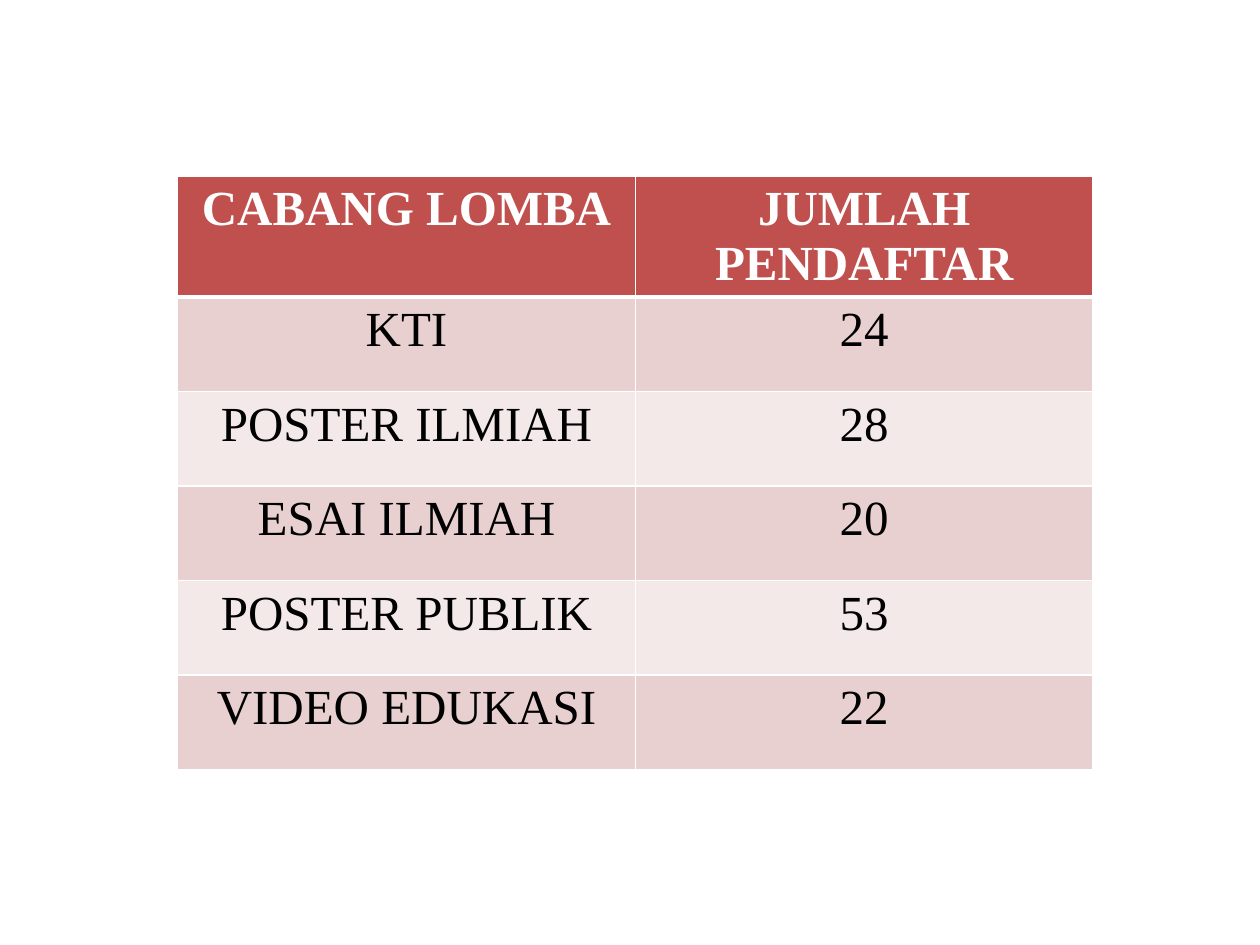
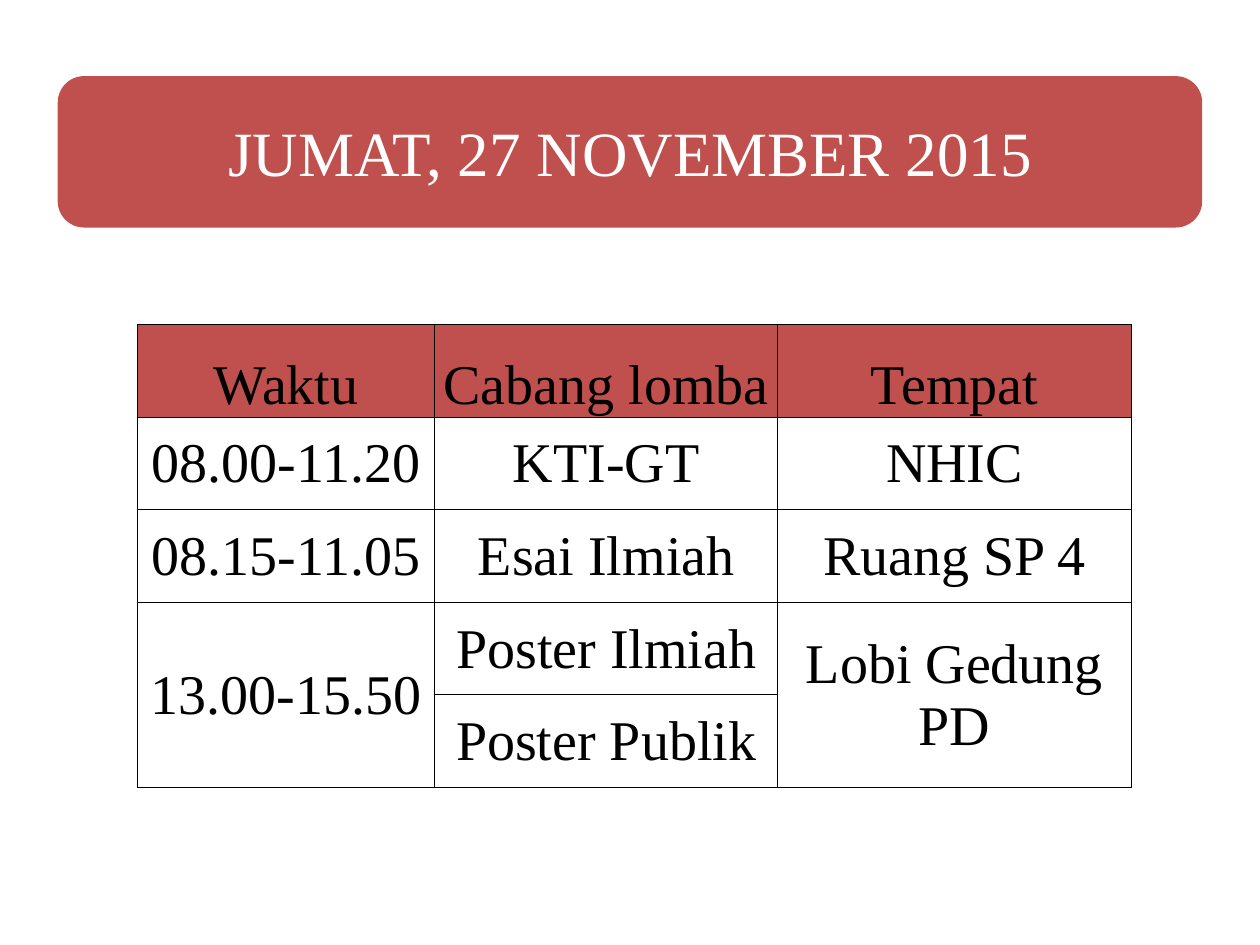
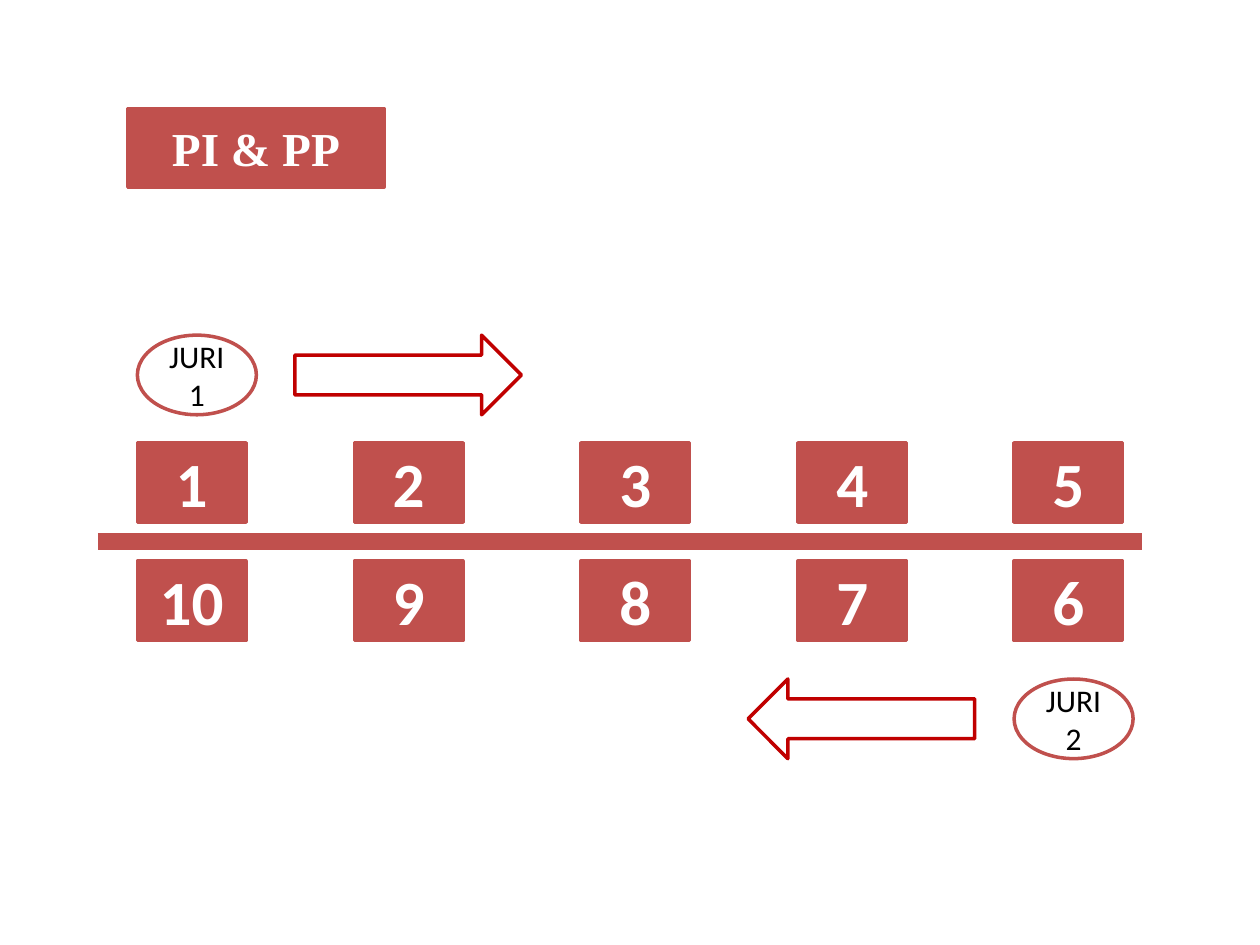
from lxml.etree import SubElement
from pptx import Presentation
from pptx.dml.color import RGBColor
from pptx.enum.shapes import MSO_CONNECTOR, MSO_SHAPE
from pptx.enum.text import MSO_ANCHOR, MSO_AUTO_SIZE, PP_ALIGN
from pptx.oxml.ns import qn
from pptx.util import Pt

BRICK = RGBColor(0xC0, 0x50, 0x4D)
CRIMSON = RGBColor(0xC0, 0x00, 0x00)
ROSE = RGBColor(0xE8, 0xD0, 0xD0)
BLUSH = RGBColor(0xF4, 0xE9, 0xE9)
WHITE = RGBColor(0xFF, 0xFF, 0xFF)
BLACK = RGBColor(0x00, 0x00, 0x00)
SERIF = "Times New Roman"
SANS = "Calibri"
TITLE_ONLY, BLANK = 5, 6

ENTRANTS = [
    ("CABANG LOMBA", "JUMLAH PENDAFTAR"),
    ("KTI", "24"),
    ("POSTER ILMIAH", "28"),
    ("ESAI ILMIAH", "20"),
    ("POSTER PUBLIK", "53"),
    ("VIDEO EDUKASI", "22"),
]
SCHEDULE = [
    ("Waktu", "Cabang lomba", "Tempat"),
    ("08.00-11.20", "KTI-GT", "NHIC"),
    ("08.15-11.05", "Esai Ilmiah", "Ruang SP 4"),
    ("13.00-15.50", "Poster Ilmiah", "Lobi Gedung PD"),
    ("", "Poster Publik", ""),
]
STAND_LEFTS = (78.5, 202.5, 332, 456, 579.5)


def write(frame, text, size, color, font=SERIF, bold=False):
    para = frame.paragraphs[0]
    para.alignment = PP_ALIGN.CENTER
    span = para.add_run()
    span.text = text
    span.font.name = font
    span.font.size = Pt(size)
    span.font.bold = bold
    span.font.color.rgb = color


def paint(shape, fill, line):
    shape.fill.solid()
    shape.fill.fore_color.rgb = fill
    shape.line.color.rgb = line
    shape.line.width = Pt(2)


def add_panel(page, kind, left, top, width, height, fill=BRICK, line=BRICK):
    panel = page.shapes.add_shape(kind, Pt(left), Pt(top), Pt(width), Pt(height))
    panel.shadow.inherit = False
    paint(panel, fill, line)
    panel.text_frame.word_wrap = True
    panel.text_frame.vertical_anchor = MSO_ANCHOR.MIDDLE
    return panel


def set_title(page, text, left, top, width, height, size, bold=False):
    title = page.shapes.title
    title.left, title.top = Pt(left), Pt(top)
    title.width, title.height = Pt(width), Pt(height)
    frame = title.text_frame
    frame.auto_size = MSO_AUTO_SIZE.NONE
    frame.word_wrap = True
    frame.vertical_anchor = MSO_ANCHOR.MIDDLE
    write(frame, text, size, WHITE, bold=bold)
    return title


def set_borders(cell, color, left=1, right=1, top=1, bottom=1):
    properties = cell._tc.get_or_add_tcPr()
    for side, width in zip("LRTB", (left, right, top, bottom)):
        edge = SubElement(properties, qn(f"a:ln{side}"), w=str(Pt(width)))
        fill = SubElement(edge, qn("a:solidFill"))
        SubElement(fill, qn("a:srgbClr"), val=str(color))


def add_grid(page, rows, left, top, widths, row_height):
    frame = page.shapes.add_table(
        len(rows), len(widths), Pt(left), Pt(top),
        Pt(sum(widths)), Pt(row_height * len(rows)))
    grid = frame.table
    grid.first_row = grid.horz_banding = False
    for column, width in zip(grid.columns, widths):
        column.width = Pt(width)
    for row in grid.rows:
        row.height = Pt(row_height)
    return grid


def fill_cell(cell, color):
    cell.fill.solid()
    cell.fill.fore_color.rgb = color


def build_entrants(deck):
    page = deck.slides.add_slide(deck.slide_layouts[BLANK])
    grid = add_grid(page, ENTRANTS, 101.5, 100.5, (261.5, 261.5), 54)
    for r, row in enumerate(ENTRANTS):
        header = r == 0
        for c, text in enumerate(row):
            cell = grid.cell(r, c)
            set_borders(cell, WHITE, top=3 if r == 1 else 1, bottom=3 if header else 1)
            fill_cell(cell, BRICK if header else ROSE if r % 2 else BLUSH)
            write(cell.text_frame, text, 28, WHITE if header else BLACK, bold=header)


def build_schedule(deck):
    page = deck.slides.add_slide(deck.slide_layouts[TITLE_ONLY])
    banner = (34, 44.5, 652, 84.5)
    add_panel(page, MSO_SHAPE.ROUNDED_RECTANGLE, *banner)
    title = set_title(page, "JUMAT, 27 NOVEMBER 2015", *banner, 36)
    page.shapes._spTree.append(title._element)
    grid = add_grid(page, SCHEDULE, 78.5, 185.5, (170, 196, 202), 52.9)
    for r, row in enumerate(SCHEDULE):
        for c, text in enumerate(row):
            cell = grid.cell(r, c)
            cell.margin_left = cell.margin_right = cell.margin_top = Pt(0.7)
            cell.margin_bottom = Pt(0)
            cell.vertical_anchor = MSO_ANCHOR.MIDDLE if r else MSO_ANCHOR.BOTTOM
            set_borders(cell, BLACK, 0.5, 0.5, 0.5, 0.5)
            if r:
                cell.fill.background()
            else:
                fill_cell(cell, BRICK)
            if text:
                write(cell.text_frame, text, 32, BLACK)
    for c in (0, 2):
        grid.cell(3, c).merge(grid.cell(4, c))


def add_divider(page, left, right, y):
    divider = page.shapes.add_connector(
        MSO_CONNECTOR.STRAIGHT, Pt(left), Pt(y), Pt(right), Pt(y))
    divider.line.color.rgb = BRICK
    divider.line.width = Pt(10)
    SubElement(divider._element.spPr, qn("a:effectLst"))


def add_stands(page, top, numbers):
    for left, number in zip(STAND_LEFTS, numbers):
        stand = add_panel(page, MSO_SHAPE.RECTANGLE, left, top, 62, 45.5)
        write(stand.text_frame, str(number), 36, WHITE, SANS, bold=True)


def add_judge(page, name, left, top, arrow, arrow_left):
    judge = add_panel(page, MSO_SHAPE.OVAL, left, top, 68, 45.5, WHITE)
    write(judge.text_frame, name, 18, BLACK, SANS)
    add_panel(page, arrow, arrow_left, top, 129.5, 45.5, WHITE, CRIMSON)


def build_judging_route(deck):
    page = deck.slides.add_slide(deck.slide_layouts[TITLE_ONLY])
    title = set_title(page, "PI & PP", 73, 62, 146.5, 45, 27, bold=True)
    paint(title, BRICK, BRICK)
    add_stands(page, 253, range(1, 6))
    add_divider(page, 56, 652.5, 309.5)
    add_stands(page, 320.5, range(10, 5, -1))
    add_judge(page, "JURI 1", 78.5, 191.5, MSO_SHAPE.RIGHT_ARROW, 168.5)
    add_judge(page, "JURI 2", 579.5, 388, MSO_SHAPE.LEFT_ARROW, 427.5)


def main():
    deck = Presentation()
    deck.slide_width, deck.slide_height = Pt(720), Pt(540)
    build_entrants(deck)
    build_schedule(deck)
    build_judging_route(deck)
    deck.save("out.pptx")


if __name__ == "__main__":
    main()
